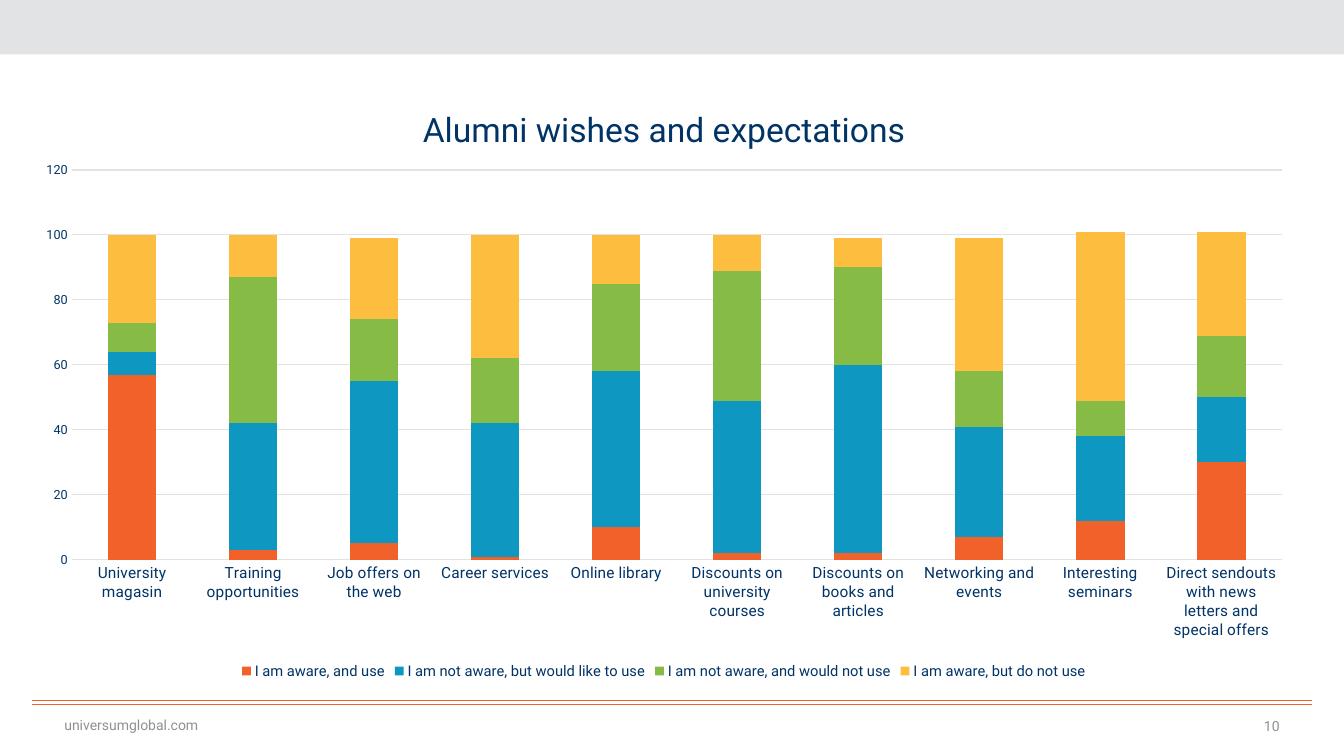
import pptx
import pptx.chart.data
import pptx.dml.color
import pptx.enum.chart
import pptx.enum.shapes
import pptx.enum.text
import pptx.oxml
import pptx.oxml.ns
import pptx.util

NAVY, GRID, GREY, ORANGE = "003366", "E3E2E3", "919090", "F1612A"

CATEGORIES = [
    "University magasin", "Training opportunities", "Job offers on the web",
    "Career services", "Online library", "Discounts on university courses",
    "Discounts on books and articles", "Networking and events",
    "Interesting seminars", "Direct sendouts with news letters and special offers",
]
ANSWERS = [
    ("I am aware, and use", ORANGE, [57, 3, 5, 1, 10, 2, 2, 7, 12, 30]),
    ("I am not aware, but would like to use", "0E97C1",
     [7, 39, 50, 41, 48, 47, 58, 34, 26, 20]),
    ("I am not aware, and would not use", "86BC45",
     [9, 45, 19, 20, 27, 40, 30, 17, 11, 19]),
    ("I am aware, but do not use", "FDBE3F",
     [27, 13, 25, 38, 15, 11, 9, 41, 52, 32]),
]


def color(hex_string):
    return pptx.dml.color.RGBColor.from_string(hex_string)


class SlideBuilder:
    """Places elements on one slide; lengths are percentages of its size."""

    font_name = "Roboto"

    def __init__(self, deck):
        self.deck = deck
        self.slide = deck.slides.add_slide(deck.slide_layouts[6])
        self.shapes = self.slide.shapes

    def across(self, percent):
        return round(self.deck.slide_width * percent / 100)

    def down(self, percent):
        return round(self.deck.slide_height * percent / 100)

    def frame(self, left, top, width, height):
        return (self.across(left), self.down(top),
                self.across(width), self.down(height))

    def style(self, font, size, hex_string):
        font.name = self.font_name
        font.size = pptx.util.Pt(size)
        font.bold = False
        font.color.rgb = color(hex_string)

    def stroke(self, line, width, hex_string):
        line.color.rgb = color(hex_string)
        line.width = pptx.util.Pt(width)

    def band(self, left, top, width, height, fill):
        kind = pptx.enum.shapes.MSO_SHAPE.RECTANGLE
        band = self.shapes.add_shape(kind, *self.frame(left, top, width, height))
        band.shadow.inherit = False
        band.fill.solid()
        band.fill.fore_color.rgb = color(fill)
        band.line.fill.background()

    def rule(self, left, right, top):
        kind = pptx.enum.shapes.MSO_CONNECTOR.STRAIGHT
        rule = self.shapes.add_connector(
            kind, self.across(left), self.down(top),
            self.across(right), self.down(top))
        self.stroke(rule.line, 0.25, ORANGE)
        rule._element.spPr.append(pptx.oxml.parse_xml(
            f"<a:effectLst {pptx.oxml.ns.nsdecls('a')}/>"))

    def label(self, text, left, top, width, height, align, anchor):
        box = self.shapes.add_textbox(*self.frame(left, top, width, height))
        box.text_frame.word_wrap = True
        box.text_frame.vertical_anchor = anchor
        box.text_frame.text = text
        para = box.text_frame.paragraphs[0]
        para.alignment = align
        self.style(para.runs[0].font, 10, GREY)

    def stacked_columns(self, title, categories, answers, left, top, width, height):
        data = pptx.chart.data.CategoryChartData()
        data.categories = categories
        for name, _, values in answers:
            data.add_series(name, values)
        kind = pptx.enum.chart.XL_CHART_TYPE.COLUMN_STACKED
        chart = self.shapes.add_chart(
            kind, *self.frame(left, top, width, height), data).chart
        self.style(chart.font, 10, "414041")

        chart.has_title = True
        chart.chart_title.text_frame.text = title
        heading = chart.chart_title.text_frame.paragraphs[0].runs[0]
        self.style(heading.font, 24, NAVY)
        chart.has_legend = True
        chart.legend.position = pptx.enum.chart.XL_LEGEND_POSITION.BOTTOM
        chart.legend.include_in_layout = False
        self.style(chart.legend.font, 10.5, NAVY)

        plot = chart.plots[0]
        plot.gap_width, plot.overlap = 150, 100
        plot.vary_by_categories = False
        for series, (_, fill, _) in zip(plot.series, answers):
            series.format.fill.solid()
            series.format.fill.fore_color.rgb = color(fill)

        for axis, size in ((chart.category_axis, 11), (chart.value_axis, 9)):
            axis.major_tick_mark = pptx.enum.chart.XL_TICK_MARK.NONE
            axis.minor_tick_mark = pptx.enum.chart.XL_TICK_MARK.NONE
            self.style(axis.tick_labels.font, size, NAVY)
        self.stroke(chart.category_axis.format.line, 0.75, GRID)
        scale = chart.value_axis
        scale.minimum_scale, scale.maximum_scale, scale.major_unit = 0, 120, 20
        scale.format.line.fill.background()
        scale.has_major_gridlines = True
        self.stroke(scale.major_gridlines.format.line, 0.75, GRID)
        self.place_plot(chart, x=0.04, y=0.144, w=0.94, h=0.65)

    def place_plot(self, chart, **shares):
        """Fix the inner plot area, in shares of the chart's size."""
        area = chart._chartSpace.chart.plotArea
        for layout in area.findall(pptx.oxml.ns.qn("c:layout")):
            area.remove(layout)
        settings = {"layoutTarget": "inner", "xMode": "edge", "yMode": "edge", **shares}
        parts = "".join(f'<c:{tag} val="{val}"/>' for tag, val in settings.items())
        area.insert(0, pptx.oxml.parse_xml(
            f"<c:layout {pptx.oxml.ns.nsdecls('c')}>"
            f"<c:manualLayout>{parts}</c:manualLayout></c:layout>"))


def main():
    deck = pptx.Presentation()
    deck.slide_width = pptx.util.Inches(13.33)
    deck.slide_height = pptx.util.Inches(7.5)
    align = pptx.enum.text.PP_ALIGN
    anchor = pptx.enum.text.MSO_ANCHOR

    page = SlideBuilder(deck)
    page.band(0, 0, 100, 7.2, "E2E3E4")
    for top in (93.2, 92.67):
        page.rule(2.4, 97.6, top)
    page.label("10", 76.97, 94.13, 18.98, 3.87, align.RIGHT, anchor.MIDDLE)
    page.label("universumglobal.com", 4.05, 94.13, 26.26, 3.87, align.LEFT, anchor.TOP)
    page.stacked_columns("Alumni wishes and expectations", CATEGORIES, ANSWERS,
                         1.5, 11.07, 95.8, 79.33)
    deck.save("out.pptx")


if __name__ == "__main__":
    main()
